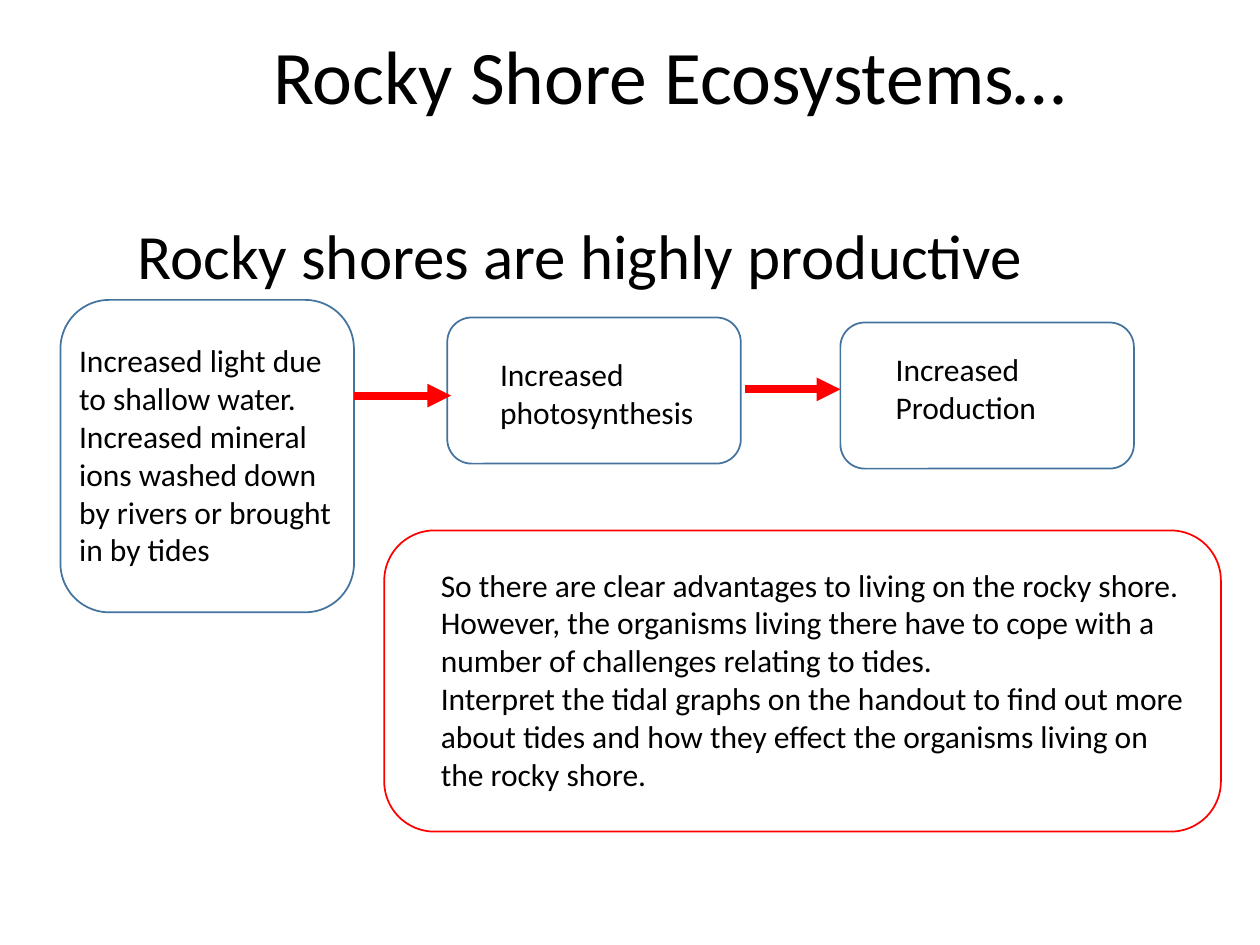
from dataclasses import dataclass

from lxml.etree import SubElement
from pptx import Presentation
from pptx.dml.color import RGBColor
from pptx.enum.shapes import MSO_CONNECTOR, MSO_SHAPE
from pptx.enum.text import MSO_ANCHOR, MSO_AUTO_SIZE, PP_ALIGN
from pptx.oxml.ns import qn
from pptx.util import Inches, Pt


@dataclass(frozen=True)
class Theme:
    font: str = "Calibri"
    text: RGBColor = RGBColor(0, 0, 0)
    box_line: RGBColor = RGBColor(0x43, 0x73, 0x9E)
    accent: RGBColor = RGBColor(0xFF, 0, 0)
    title: float = 43.2
    subtitle: float = 36
    body: float = 18
    outline: float = 1
    arrow: float = 4.5


THEME = Theme()

# Each step: box, text area relative to the box, paragraphs
STEPS = [
    ((0.48, 2.38, 2.33, 2.48), (0.05, 0.28, 2.33, 1.92),
     ["Increased light due to shallow water.",
      "Increased mineral ions washed down by rivers or brought in by tides"]),
    ((3.55, 2.52, 2.33, 1.16), (0.32, 0.25, 1.92, 0.71),
     ["Increased photosynthesis"]),
    ((6.67, 2.56, 2.33, 1.16), (0.34, 0.17, 1.65, 0.71),
     ["Increased Production"]),
]
ARROWS = [(2.81, 3.58, 3.14), (5.91, 6.67, 3.09)]
CONCLUSION = (
    (3.05, 4.21, 6.64, 2.39), (0.35, 0.23, 6.14, 1.92),
    ["So there are clear advantages to living on the rocky shore.",
     "However, the organisms living there have to cope with a number of "
     "challenges relating to tides.",
     "Interpret the tidal graphs on the handout to find out more about tides "
     "and how they effect the organisms living on the rocky shore."],
)


def write(tf, lines, size, wrap=True):
    """Fill a text frame with plain left-aligned paragraphs."""
    frame_format = {"word_wrap": wrap, "auto_size": MSO_AUTO_SIZE.NONE,
                    "vertical_anchor": MSO_ANCHOR.TOP}
    for name, value in frame_format.items():
        setattr(tf, name, value)
    for i, line in enumerate(lines):
        p = tf.paragraphs[0] if i == 0 else tf.add_paragraph()
        p.alignment = PP_ALIGN.LEFT
        p.space_before = Pt(0)
        r = p.add_run()
        r.text = line
        for name, value in {"name": THEME.font, "size": Pt(size)}.items():
            setattr(r.font, name, value)
        r.font.color.rgb = THEME.text


def fill_placeholder(sp, box, text, size, wrap=True):
    for name, value in zip(("left", "top", "width", "height"), box):
        setattr(sp, name, Inches(value))
    write(sp.text_frame, [text], size, wrap)


def add_heading(s, title_box, subtitle_box):
    body = s.placeholders[1]
    fill_placeholder(body, subtitle_box, "Rocky shores are highly productive",
                     THEME.subtitle)
    pPr = body.text_frame.paragraphs[0]._p.get_or_add_pPr()
    pPr.set("marL", "0")
    pPr.set("indent", "0")
    SubElement(pPr, qn("a:buNone"))
    fill_placeholder(s.shapes.title, title_box, "Rocky Shore Ecosystems…",
                     THEME.title, wrap=False)


def add_panel(s, box, text_area, lines, color):
    """Draw a rounded outline with a text box placed relative to it."""
    x, y, w, h = box
    sp = s.shapes.add_shape(MSO_SHAPE.ROUNDED_RECTANGLE,
                            Inches(x), Inches(y), Inches(w), Inches(h))
    sp.shadow.inherit = False
    sp.fill.background()
    sp.line.color.rgb = color
    sp.line.width = Pt(THEME.outline)
    dx, dy, tw, th = text_area
    label = s.shapes.add_textbox(Inches(x + dx), Inches(y + dy),
                                 Inches(tw), Inches(th))
    write(label.text_frame, lines, THEME.body)


def add_arrow(s, x1, x2, y):
    line = s.shapes.add_connector(MSO_CONNECTOR.STRAIGHT, Inches(x1), Inches(y),
                                  Inches(x2), Inches(y))
    line.line.color.rgb = THEME.accent
    line.line.width = Pt(THEME.arrow)
    SubElement(line.line._get_or_add_ln(), qn("a:tailEnd"), type="triangle")
    SubElement(line._element.spPr, qn("a:effectLst"))


def main():
    prs = Presentation()
    prs.slide_width, prs.slide_height = Inches(10), Inches(7.5)
    s = prs.slides.add_slide(prs.slide_layouts[1])
    add_heading(s, (2.07, 0.18, 6.56, 0.83), (0.99, 1.67, 8.01, 1.34))
    for step in STEPS:
        add_panel(s, *step, THEME.box_line)
    for arrow in ARROWS:
        add_arrow(s, *arrow)
    add_panel(s, *CONCLUSION, THEME.accent)
    prs.save("out.pptx")


if __name__ == "__main__":
    main()
